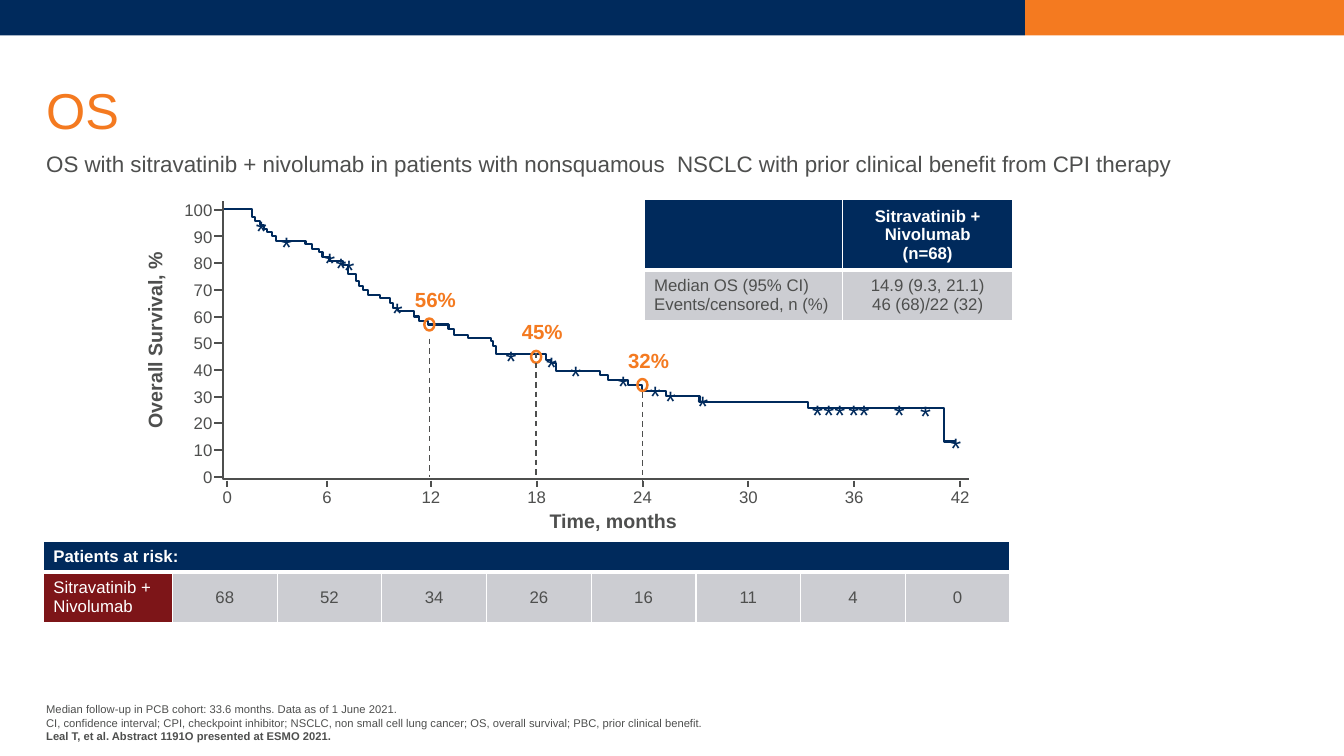
from dataclasses import dataclass
from itertools import pairwise
from typing import Any

from lxml.etree import SubElement
from pptx import Presentation
from pptx.dml.color import RGBColor
from pptx.enum.dml import MSO_LINE
from pptx.enum.shapes import MSO_CONNECTOR, MSO_SHAPE
from pptx.enum.text import MSO_ANCHOR, PP_ALIGN
from pptx.oxml.ns import qn
from pptx.util import Pt


@dataclass(frozen=True)
class Theme:
    font: str = "Arial"
    navy: str = "002A5C"
    orange: str = "F47A20"
    gray: str = "4E4F4E"
    red: str = "7D1518"
    silver: str = "CCCDD2"
    white: str = "FFFFFF"
    title: float = 36
    star: float = 20
    subtitle: float = 16
    milestone: float = 14.6
    axis_title: float = 14
    body: float = 12
    footnote: float = 8


@dataclass(frozen=True)
class Style:
    size: float
    color: str
    bold: bool = False
    align: PP_ALIGN = PP_ALIGN.LEFT
    spacing: Any = None


@dataclass(frozen=True)
class Milestone:
    label: str
    x: float
    y: float
    label_top: float
    drop_top: float
    drop_bottom: float


@dataclass(frozen=True)
class Cell:
    text: str
    fill: str
    style: Style
    bottom_border: float = 1


THEME = Theme()
LABEL = Style(THEME.body, THEME.gray)
CENTERED = Style(THEME.body, THEME.gray, align=PP_ALIGN.CENTER)
AXIS_TITLE = Style(THEME.axis_title, THEME.gray, True, PP_ALIGN.CENTER, Pt(12.1))
HEADER = Style(THEME.body, THEME.white, True)
NO_INSET = (0, 0, 0, 0)
DEFAULT_INSET = (7.2, 3.6, 7.2, 3.6)

MILESTONES = [
    Milestone("56%", 306.7, 231.8, 203.8, 241.9, 340.6),
    Milestone("45%", 383, 254.9, 226.8, 252, 342.7),
    Milestone("32%", 458.9, 275, 247.7, 280.1, 344.2),
]
# Each curve lists its start, then (x, y) after every drop; the last x ends the curve.
EARLY_SURVIVAL = [
    (159.8, 149), (180, 154.8), (182.2, 157.7), (185.8, 160.6), (188.6, 163.4),
    (190.8, 165.6), (194.4, 168.5), (197.3, 172.1), (218.2, 174.2), (223.2, 177.8),
    (228.2, 180), (230.4, 183.6), (235.4, 186.5), (244.8, 189.4), (248.4, 195.8),
    (254.2, 200.9), (256.3, 204.5), (259.2, 207.4), (262.8, 211), (271.4, 213.1),
    (278.6, 216.7), (280.8, 220.3), (284.4, 222.5), (295.9, 226.1), (299.5, 229),
    (306, 231.8), (320.4, 234.7), (324, 239), (334.1, 241.2), (350.6, 243.4),
    (352.1, 247), (354.2, 252.7), (390.2, 257), (393.8, 259.2), (397.4, 265),
    (428.4, 267.8), (430.6, 267.8),
]
LATE_SURVIVAL = [
    (428.4, 267.8), (434.2, 271.4), (448.6, 275), (458.6, 279.4), (475.9, 283),
    (499.7, 287.3), (577.4, 291.6), (674.6, 315.4), (682.6, 315.4),
]
CENSORED = [
    (175.7, 149), (193.7, 160.6), (224.6, 172.1), (232.6, 175.7), (238.3, 177.1),
    (272.9, 207.4), (354.2, 241.9), (383, 246.2), (400.3, 252.7), (434.2, 259.9),
    (457.2, 267.1), (468, 270.7), (491, 274.3), (573.1, 280.1), (581, 280.1),
    (589, 280.1), (599, 280.1), (606.2, 280.1), (631.4, 280.1), (650.2, 280.8),
    (671.8, 303.8),
]
MONTH_X = [162.4, 233.6] + [307.8 + 75.6 * step for step in range(6)]


def set_values(target: Any, values: dict[str, Any]) -> None:
    for name, value in values.items():
        setattr(target, name, value)


def write(frame: Any, text: str, style: Style, last_bold: bool = False) -> None:
    """Fill a text frame with one paragraph per line of text."""
    lines = text.split("\n")
    for index, line in enumerate(lines):
        para = frame.paragraphs[0] if index == 0 else frame.add_paragraph()
        set_values(para, {"alignment": style.align, "line_spacing": style.spacing})
        span = para.add_run()
        span.text = line
        bold = style.bold or (last_bold and index == len(lines) - 1)
        set_values(span.font, {"name": THEME.font, "size": Pt(style.size), "bold": bold})
        span.font.color.rgb = RGBColor.from_string(style.color)


def format_frame(frame: Any, inset: tuple, anchor: MSO_ANCHOR, wrap: bool = True) -> None:
    sides = ("margin_left", "margin_top", "margin_right", "margin_bottom")
    set_values(frame, dict(zip(sides, map(Pt, inset))))
    set_values(frame, {"vertical_anchor": anchor, "word_wrap": wrap})


def add_text(page: Any, at: tuple, text: str, style: Style, inset: tuple = DEFAULT_INSET,
             anchor: MSO_ANCHOR = MSO_ANCHOR.TOP, wrap: bool = True,
             last_bold: bool = False) -> Any:
    box = page.shapes.add_textbox(*map(Pt, at))
    format_frame(box.text_frame, inset, anchor, wrap)
    write(box.text_frame, text, style, last_bold)
    return box


def add_bar(page: Any, left: float, width: float, color: str) -> None:
    bar = page.shapes.add_shape(MSO_SHAPE.RECTANGLE, Pt(left), 0, Pt(width), Pt(25.4))
    bar.shadow.inherit = False
    bar.fill.solid()
    bar.fill.fore_color.rgb = RGBColor.from_string(color)
    bar.line.fill.background()


def outline(shape: Any, color: str, width: float) -> None:
    shape.shadow.inherit = False
    shape.fill.background()
    shape.line.color.rgb = RGBColor.from_string(color)
    shape.line.width = Pt(width)


def add_path(page: Any, points: list, color: str) -> None:
    start, *rest = [(Pt(x), Pt(y)) for x, y in points]
    builder = page.shapes.build_freeform(*start, scale=1)
    builder.add_line_segments(rest, close=False)
    outline(builder.convert_to_shape(), color, 1.5)


def add_steps(page: Any, drops: list) -> None:
    points = [drops[0]]
    for (_, level), (x, lower) in pairwise(drops):
        points += [(x, level), (x, lower)] if lower != level else [(x, level)]
    add_path(page, points, THEME.navy)


def add_line(page: Any, ends: tuple, width: float = 1.5, dash: Any = None) -> None:
    line = page.shapes.add_connector(MSO_CONNECTOR.STRAIGHT, *map(Pt, ends))
    line.line.color.rgb = RGBColor.from_string(THEME.gray)
    set_values(line.line, {"width": Pt(width), "dash_style": dash})
    SubElement(line.element.spPr, qn("a:effectLst"))


def add_milestone(page: Any, mark: Milestone) -> None:
    add_text(page, (mark.x - 10.3, mark.label_top, 30.2, 18.7), mark.label,
             Style(THEME.milestone, THEME.orange, True), (0, 0.9, 0, 0), wrap=False)
    circle = page.shapes.add_shape(MSO_SHAPE.OVAL, Pt(mark.x - 3.6), Pt(mark.y - 4.3),
                                   Pt(7.2), Pt(8.6))
    outline(circle, THEME.orange, 1.75)
    add_line(page, (mark.x, mark.drop_top, mark.x, mark.drop_bottom), 1, MSO_LINE.DASH)


def format_cell(cell: Any, content: Cell) -> None:
    properties = cell._tc.get_or_add_tcPr()
    for side, width in zip("LRTB", (1, 1, 1, content.bottom_border)):
        border = SubElement(properties, qn(f"a:ln{side}"), w=str(Pt(width)))
        fill = SubElement(border, qn("a:solidFill"))
        SubElement(fill, qn("a:srgbClr"), val=THEME.white)
    cell.fill.solid()
    cell.fill.fore_color.rgb = RGBColor.from_string(content.fill)
    cell.vertical_anchor = MSO_ANCHOR.MIDDLE
    write(cell.text_frame, content.text, content.style)


def add_grid(page: Any, left: float, top: float, widths: list, heights: list,
             rows: list) -> Any:
    frame = page.shapes.add_table(len(heights), len(widths), Pt(left), Pt(top),
                                  Pt(sum(widths)), Pt(sum(heights)))
    table = frame.table
    table.horz_banding = False
    for column, width in zip(table.columns, widths):
        column.width = Pt(width)
    for row, height, contents in zip(table.rows, heights, rows):
        row.height = Pt(height)
        for cell, content in zip(row.cells, contents):
            format_cell(cell, content)
    return table


def add_axes(page: Any) -> None:
    add_path(page, [(691.9, 342.4), (159.1, 342.4), (159.1, 143.3)], THEME.gray)
    for index, x in enumerate(MONTH_X):
        add_line(page, (x, 343.4, x, 347.8))
        add_text(page, (x - 18, 344.2, 36, 21.6), str(6 * index), CENTERED)
    for index in range(11):
        y = 149.8 + 19.08 * index
        add_line(page, (158.6, y, 152.8, y))
        add_text(page, (118.8, y - 10.8, 40, 21.6), str(100 - 10 * index),
                 Style(THEME.body, THEME.gray, align=PP_ALIGN.RIGHT))
    add_text(page, (367.2, 368, 141.8, 12.2), "Time, months", AXIS_TITLE, NO_INSET)
    survival = add_text(page, (28.1, 236.9, 169.2, 12.2), "Overall Survival, %",
                        AXIS_TITLE, NO_INSET)
    survival.rotation = -90


def add_tables(page: Any) -> None:
    centered_header = Style(THEME.body, THEME.white, True, PP_ALIGN.CENTER)
    add_grid(page, 460.1, 142.6, [142, 121.2], [50.4, 36], [
        [Cell("", THEME.navy, HEADER, 3),
         Cell("Sitravatinib +\nNivolumab\n(n=68)", THEME.navy, centered_header, 3)],
        [Cell("Median OS (95% CI)\nEvents/censored, n (%)", THEME.silver, LABEL),
         Cell("14.9 (9.3, 21.1)\n46 (68)/22 (32)", THEME.silver, CENTERED)],
    ])
    at_risk = [68, 52, 34, 26, 16, 11, 4, 0]
    title = Cell("Patients at risk:", THEME.navy, HEADER, 3)
    arm = Cell("Sitravatinib +\nNivolumab", THEME.red, Style(THEME.body, THEME.white))
    table = add_grid(page, 31, 386.9, [92.2] + [74.8] * 8, [21.6, 36], [
        [title] + [Cell("", THEME.navy, HEADER, 3)] * 8,
        [arm] + [Cell(str(count), THEME.silver, CENTERED) for count in at_risk],
    ])
    table.cell(0, 0).merge(table.cell(0, 8))


def main() -> None:
    deck = Presentation()
    set_values(deck, {"slide_width": Pt(960), "slide_height": Pt(540)})
    page = deck.slides.add_slide(deck.slide_layouts[5])
    add_bar(page, 0, 732.2, THEME.navy)
    add_bar(page, 732.2, 227.8, THEME.orange)

    title = page.shapes.title
    set_values(title, {"left": Pt(33), "top": Pt(29.5), "width": Pt(895), "height": Pt(70.6)})
    format_frame(title.text_frame, NO_INSET, MSO_ANCHOR.BOTTOM)
    write(title.text_frame, "OS", Style(THEME.title, THEME.orange, spacing=0.9))
    add_text(page, (33, 91.4, 894.2, 51.1),
             "OS with sitravatinib + nivolumab in patients with nonsquamous  NSCLC "
             "with prior clinical benefit from CPI therapy",
             Style(THEME.subtitle, THEME.gray, spacing=0.9), (0, 2.9, 0, 0), MSO_ANCHOR.MIDDLE)

    add_axes(page)
    add_steps(page, EARLY_SURVIVAL)
    add_steps(page, LATE_SURVIVAL)
    for mark in MILESTONES:
        add_milestone(page, mark)
    for left, top in CENSORED:
        add_text(page, (left, top, 17.3, 17.3), "*", Style(THEME.star, THEME.navy))
    add_tables(page)
    add_text(page, (33, 500.4, 674.6, 30.2),
             "Median follow-up in PCB cohort: 33.6 months. Data as of 1 June 2021.\n"
             "CI, confidence interval; CPI, checkpoint inhibitor; NSCLC, non small cell lung "
             "cancer; OS, overall survival; PBC, prior clinical benefit.\n"
             "Leal T, et al. Abstract 1191O presented at ESMO 2021.",
             Style(THEME.footnote, THEME.gray), NO_INSET, MSO_ANCHOR.BOTTOM, last_bold=True)
    deck.save("out.pptx")


if __name__ == "__main__":
    main()
